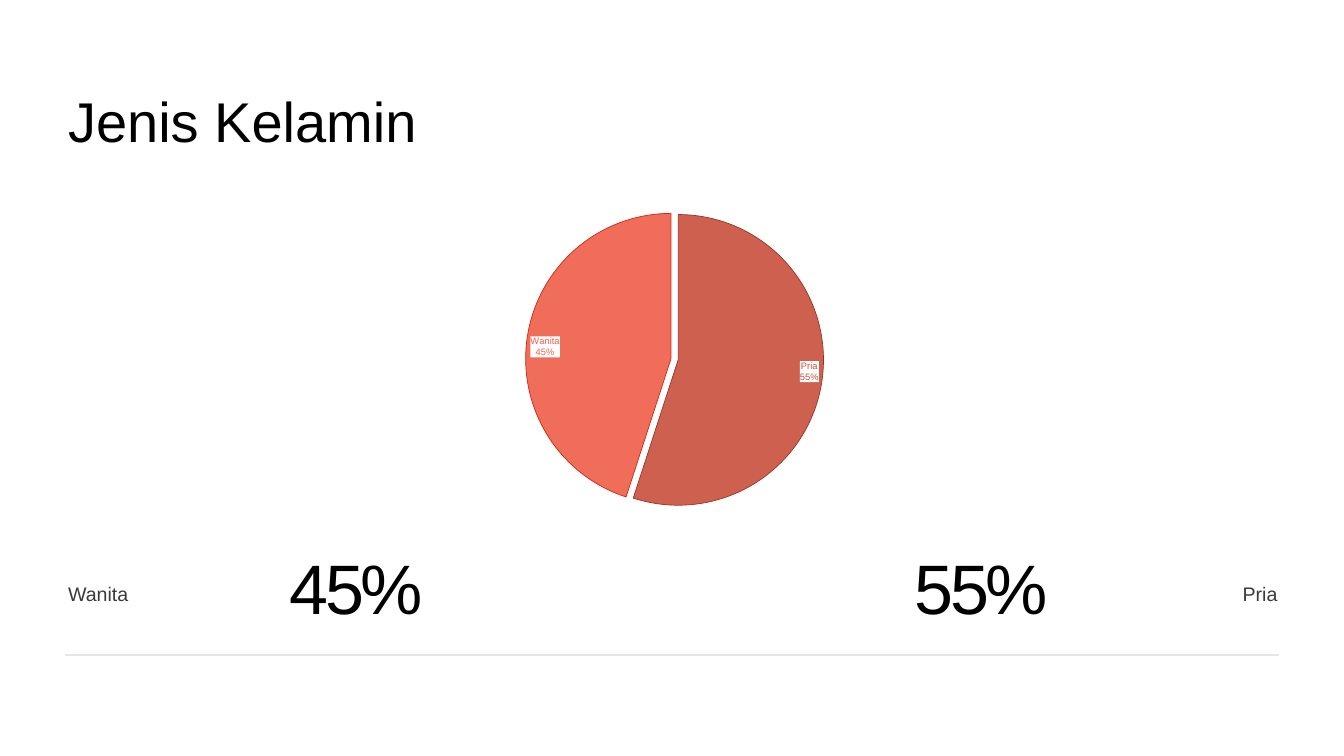
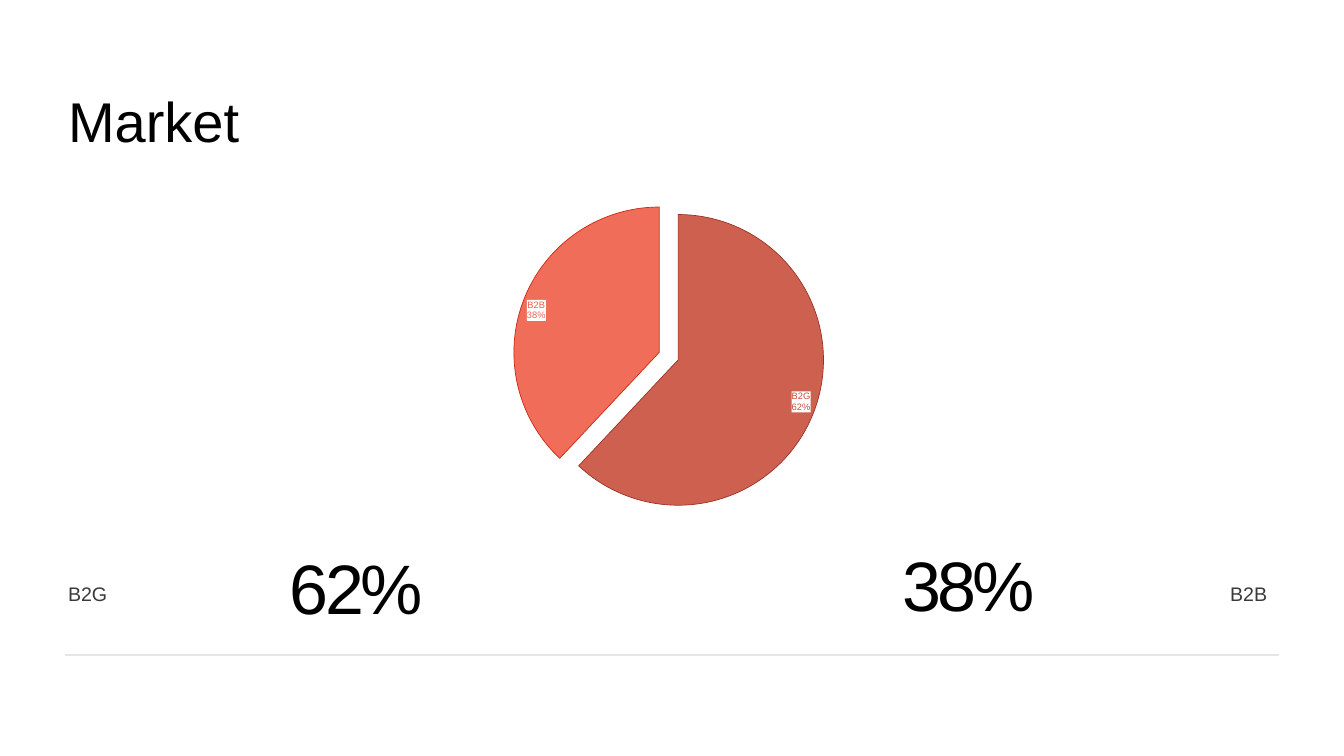
import dataclasses

import pptx
import pptx.chart.data
import pptx.dml.color
import pptx.enum.chart
import pptx.enum.shapes
import pptx.enum.text
import pptx.oxml
import pptx.oxml.ns
import pptx.util

RGB = pptx.dml.color.RGBColor
ALIGN = pptx.enum.text.PP_ALIGN
qn = pptx.oxml.ns.qn

# Shared look
PX = 9144  # EMU per px, 100 px to the inch
WIDE, HIGH = 2667, 1500
FONT = "Arial"
BLACK = RGB(0x00, 0x00, 0x00)
WHITE = RGB(0xFF, 0xFF, 0xFF)
GRAY = RGB(0x3A, 0x3A, 0x3A)
RULE = RGB(0xE6, 0xE6, 0xE6)
FILLS = (RGB(0xC9, 0x4F, 0x3E), RGB(0xEF, 0x5E, 0x49))
EDGES = (RGB(0x9B, 0x32, 0x24), RGB(0xCE, 0x27, 0x10))
PLOT = {"x": 0.02, "y": 0.09, "w": 0.98, "h": 0.9}


@dataclasses.dataclass(frozen=True)
class Box:
    left: int
    top: int
    width: int
    height: int

    def emu(self) -> tuple[int, int, int, int]:
        return tuple(side * PX for side in dataclasses.astuple(self))


@dataclasses.dataclass(frozen=True)
class Style:
    size: int
    color: RGB
    align: ALIGN = ALIGN.LEFT
    line: float = 1.0
    before: int = 0
    track: int = 0


@dataclasses.dataclass(frozen=True)
class Stat:
    share: str
    name: str
    share_box: Box
    name_box: Box


@dataclasses.dataclass(frozen=True)
class Page:
    title: str
    stats: tuple[Stat, Stat]
    slices: dict[str, int]
    burst: int


HEAD = Style(80, BLACK, before=15)
SHARE = Style(100, BLACK, ALIGN.RIGHT, line=0.9, track=-5)
NAME = Style(28, GRAY, line=1.2)
HEAD_BOX = Box(129, 165, 1714, 146)
PIE_BOX = Box(718, 368, 1231, 641)


def left_stat(share: str, name: str) -> Stat:
    return Stat(share, name, Box(517, 1091, 328, 166), Box(129, 1142, 177, 63))


def right_stat(share: str, name: str, shift: int = 0, lift: int = 0) -> Stat:
    return Stat(share, name, Box(1757 - shift, 1091 - lift, 328, 166),
                Box(2460 - shift, 1142, 207, 63))


PAGES = (
    Page("Jenis Kelamin",
         (left_stat("45%", "Wanita"), right_stat("55%", "Pria")),
         {"Pria": 55, "Wanita": 45}, burst=5),
    Page("Market",
         (left_stat("62%", "B2G"), right_stat("38%", "B2B", shift=25, lift=5)),
         {"B2G": 62, "B2B": 38}, burst=14),
)


def node(tag: str, val: object):
    """Make a chart element that holds one value."""
    made = pptx.oxml.parse_xml(f'<{tag} {pptx.oxml.ns.nsdecls("c")}/>')
    made.set("val", str(val))
    return made


# Text
def write(shape, box: Box, text: str, style: Style) -> None:
    shape.left, shape.top, shape.width, shape.height = box.emu()
    frame = shape.text_frame
    frame.text = text
    frame.word_wrap = True
    frame.auto_size = pptx.enum.text.MSO_AUTO_SIZE.SHAPE_TO_FIT_TEXT
    frame.vertical_anchor = pptx.enum.text.MSO_ANCHOR.MIDDLE
    frame.margin_left = frame.margin_right = 6 * PX
    frame.margin_top = frame.margin_bottom = 6 * PX
    para = frame.paragraphs[0]
    para.alignment = style.align
    para.line_spacing = style.line
    para.space_before = pptx.util.Pt(style.before)
    run = para.runs[0]
    run.font.name = FONT
    run.font.size = pptx.util.Pt(style.size)
    run.font.color.rgb = style.color
    if style.track:
        run.font._element.set("spc", str(style.track * 100))


def add_text(slide, box: Box, text: str, style: Style) -> None:
    write(slide.shapes.add_textbox(*box.emu()), box, text, style)


# Rule under the figures
def add_rule(slide) -> None:
    rule = slide.shapes.add_connector(
        pptx.enum.shapes.MSO_CONNECTOR.STRAIGHT,
        129 * PX, 1300 * PX, 2538 * PX, 1300 * PX)
    rule.line.color.rgb = RULE
    rule.line.width = pptx.util.Pt(2)
    rule._element.spPr.append(pptx.oxml.parse_xml(
        f'<a:effectLst {pptx.oxml.ns.nsdecls("a")}/>'))


# Pie chart
def fix_plot(chart) -> None:
    area = chart.element.find(".//" + qn("c:plotArea"))
    for old in area.findall(qn("c:layout")):
        area.remove(old)
    layout = pptx.oxml.parse_xml(
        f'<c:layout {pptx.oxml.ns.nsdecls("c")}><c:manualLayout/></c:layout>')
    manual = layout[0]
    manual.append(node("c:layoutTarget", "inner"))
    for mode in ("xMode", "yMode"):
        manual.append(node(f"c:{mode}", "edge"))
    for key, val in PLOT.items():
        manual.append(node(f"c:{key}", val))
    area.insert(0, layout)


def style_slice(point, fill: RGB, edge: RGB) -> None:
    point.format.fill.solid()
    point.format.fill.fore_color.rgb = fill
    point.format.line.color.rgb = edge
    point.format.line.width = pptx.util.Pt(1)
    label = point.data_label
    label.font.name = FONT
    label.font.size = pptx.util.Pt(13.3)
    label.font.color.rgb = fill
    label.position = pptx.enum.chart.XL_LABEL_POSITION.INSIDE_END


def finish_slices(chart, burst: int) -> None:
    """Set slice transparency and offset, and label content and ground."""
    root = chart.element
    for index, point in enumerate(root.iter(qn("c:dPt"))):
        props = point.find(qn("c:spPr"))
        color = props.find(qn("a:solidFill"))[0]
        color.append(pptx.oxml.parse_xml(
            f'<a:alpha {pptx.oxml.ns.nsdecls("a")} val="90000"/>'))
        if index == 1:
            props.addprevious(node("c:explosion", burst))
    for label in root.iter(qn("c:dLbl")):
        label.find(qn("c:showVal")).set("val", "0")
        for tag in ("c:showCatName", "c:showPercent"):
            label.find(qn(tag)).set("val", "1")
        label.find(qn("c:txPr")).addprevious(pptx.oxml.parse_xml(
            f'<c:spPr {pptx.oxml.ns.nsdecls("c", "a")}><a:solidFill>'
            f'<a:srgbClr val="{WHITE}"/></a:solidFill></c:spPr>'))
        label.append(pptx.oxml.parse_xml(
            f'<c:separator {pptx.oxml.ns.nsdecls("c")}>\n</c:separator>'))


def add_pie(slide, slices: dict[str, int], burst: int) -> None:
    data = pptx.chart.data.CategoryChartData()
    data.categories = list(slices)
    data.add_series("Series 1", list(slices.values()))
    chart = slide.shapes.add_chart(
        pptx.enum.chart.XL_CHART_TYPE.PIE, *PIE_BOX.emu(), data).chart
    chart.has_legend = False
    chart.has_title = False
    chart.font.name = FONT
    chart.font.size = pptx.util.Pt(10)
    chart.font.color.rgb = WHITE
    plot = chart.plots[0]
    plot.vary_by_categories = True
    for index, (fill, edge) in enumerate(zip(FILLS, EDGES)):
        style_slice(plot.series[0].points[index], fill, edge)
    fix_plot(chart)
    finish_slices(chart, burst)


# Slides
def add_page(deck, page: Page) -> None:
    slide = deck.slides.add_slide(deck.slide_layouts[5])
    add_rule(slide)
    write(slide.shapes.title, HEAD_BOX, page.title, HEAD)
    for stat in page.stats:
        add_text(slide, stat.share_box, stat.share, SHARE)
        add_text(slide, stat.name_box, stat.name, NAME)
    add_pie(slide, page.slices, page.burst)


def main() -> None:
    deck = pptx.Presentation()
    deck.slide_width, deck.slide_height = WIDE * PX, HIGH * PX
    for page in PAGES:
        add_page(deck, page)
    deck.save("out.pptx")


if __name__ == "__main__":
    main()
